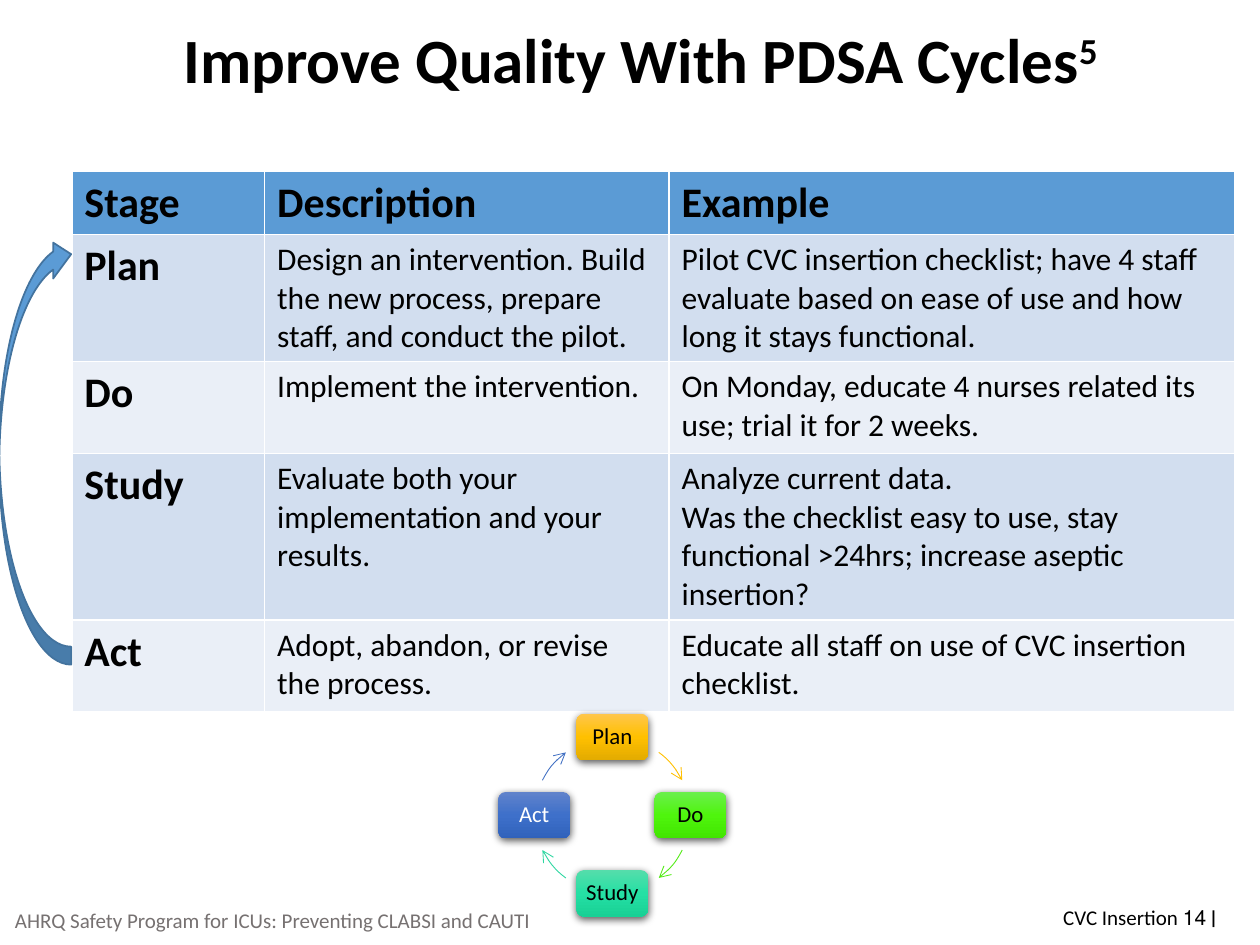
from math import cos, radians, sin

from lxml import etree
from pptx import Presentation
from pptx.dml.color import RGBColor
from pptx.enum import shapes, text
from pptx.oxml import parse_xml
from pptx.oxml.ns import nsdecls, qn
from pptx.util import Inches, Pt

ROWS = [
    ("Stage", "Description", "Example"),
    ("Plan",
     "Design an intervention. Build the new process, prepare staff, and conduct the pilot.",
     "Pilot CVC insertion checklist; have 4 staff evaluate based on ease of use "
     "and how long it stays functional."),
    ("Do", "Implement the intervention.",
     "On Monday, educate 4 nurses related its use; trial it for 2 weeks."),
    ("Study", "Evaluate both your implementation and your results.",
     "Analyze current data.\nWas the checklist easy to use, stay functional >24hrs; "
     "increase aseptic insertion?"),
    ("Act", "Adopt, abandon, or revise the process.",
     "Educate all staff on use of CVC insertion checklist."),
]
WIDTHS = [1.53, 3.21, 4.49]
HEIGHTS = [0.5, 1.01, 0.73, 1.32, 0.73]
HEAD, BANDS = "5B9BD5", ("EAEFF7", "D2DEEF")

# label, text colour, gradient, arrow colour, middle angle of the arrow
STEPS = [
    ("Plan", "000000", ("FFC64B", "FFC000", "E3AB00"), "FFC000", 320),
    ("Do", "000000", ("6BEF4D", "4FF50D", "41E500"), "53EB17", 40),
    ("Study", "000000", ("55DDAB", "25E0A4", "18D095"), "2ED7A1", 140),
    ("Act", "FFFFFF", ("6183CB", "3E70CA", "3062BB"), "4472C4", 220),
]
MID_X, MID_Y, RADIUS = 4.86, 6.47, 0.62
STEP_W, STEP_H = 0.57, 0.37
HALF = 13.5  # half the sweep of a cycle arrow, in degrees


def rgb(code):
    return RGBColor.from_string(code)


def style(para, size, color="000000", bold=False, align=None):
    para.alignment = align
    font = para.font
    font.name, font.size, font.bold = "Calibri", Pt(size), bold
    font.color.rgb = rgb(color)


def add_text(slide, box, words, size, color, align, bold=False):
    frame = slide.shapes.add_textbox(*map(Inches, box)).text_frame
    frame.word_wrap = True
    frame.vertical_anchor = text.MSO_ANCHOR.MIDDLE
    para = frame.paragraphs[0]
    para.add_run().text = words
    style(para, size, color, bold, align)
    return para


def add_stages(slide):
    table = slide.shapes.add_table(
        len(ROWS), len(WIDTHS), Inches(0.57), Inches(1.36),
        Inches(sum(WIDTHS)), Inches(sum(HEIGHTS))).table
    for col, width in zip(table.columns, WIDTHS):
        col.width = Inches(width)
    for r, (words, height) in enumerate(zip(ROWS, HEIGHTS)):
        table.rows[r].height = Inches(height)
        for c, word in enumerate(words):
            cell = table.cell(r, c)
            cell.fill.solid()
            cell.fill.fore_color.rgb = rgb(BANDS[r % 2] if r else HEAD)
            cell.text = word
            label = r == 0 or c == 0
            for para in cell.text_frame.paragraphs:
                style(para, 24 if label else 18, bold=label)


def add_glow(shape, colors):
    """Give the shape a three-stop vertical gradient and a soft shadow."""
    stops = "".join(
        f'<a:gs pos="{i * 50000}"><a:srgbClr val="{color}"/></a:gs>'
        for i, color in enumerate(colors))
    fill = parse_xml(f'<a:gradFill {nsdecls("a")}><a:gsLst>{stops}</a:gsLst>'
                     '<a:lin ang="5400000" scaled="0"/></a:gradFill>')
    shade = parse_xml(
        f'<a:effectLst {nsdecls("a")}><a:outerShdw blurRad="57150" dist="19050" '
        'dir="5400000" algn="ctr" rotWithShape="0"><a:srgbClr val="000000">'
        '<a:alpha val="63000"/></a:srgbClr></a:outerShdw></a:effectLst>')
    shape.line.fill.background()
    props = shape._element.spPr
    props.find(qn("a:prstGeom")).addnext(fill)
    props.append(shade)


def add_step(slide, index, label, color, grad):
    turn = radians(90 * index - 90)
    left = MID_X + RADIUS * cos(turn) - STEP_W / 2
    top = MID_Y + RADIUS * sin(turn) - STEP_H / 2
    step = slide.shapes.add_shape(
        shapes.MSO_SHAPE.ROUNDED_RECTANGLE,
        *map(Inches, (left, top, STEP_W, STEP_H)))
    add_glow(step, grad)
    frame = step.text_frame
    frame.word_wrap = False
    frame.vertical_anchor = text.MSO_ANCHOR.MIDDLE
    frame.margin_left = frame.margin_right = Inches(0.05)
    frame.margin_top = frame.margin_bottom = Inches(0.05)
    para = frame.paragraphs[0]
    para.text = label
    para.line_spacing = 0.9
    style(para, 13, color, align=text.PP_ALIGN.CENTER)


def add_arc(slide, color, angle):
    arc = slide.shapes.add_shape(
        shapes.MSO_SHAPE.ARC, Inches(MID_X - RADIUS), Inches(MID_Y - RADIUS),
        Inches(2 * RADIUS), Inches(2 * RADIUS))
    # Angles are stored in 60000ths of a degree, adjustments in 100000ths
    arc.adjustments[0] = (angle - HALF) * 0.6
    arc.adjustments[1] = (angle + HALF) * 0.6
    arc.shadow.inherit = False
    arc.fill.background()
    arc.line.color.rgb = rgb(color)
    arc.line.width = Pt(0.5)
    etree.SubElement(arc.line._get_or_add_ln(), qn("a:tailEnd"), type="arrow")


def add_return(slide):
    arrow = slide.shapes.add_shape(
        shapes.MSO_SHAPE.CURVED_DOWN_ARROW,
        *map(Inches, (-1.42, 3.29, 3.4, 0.57)))
    arrow.rotation = 270
    arrow.shadow.inherit = False
    arrow.fill.solid()
    arrow.fill.fore_color.rgb = rgb(HEAD)
    arrow.line.color.rgb = rgb("43739E")
    arrow.line.width = Pt(1)


def main():
    deck = Presentation()
    deck.slide_width, deck.slide_height = Inches(10), Inches(7.5)
    slide = deck.slides.add_slide(deck.slide_layouts[6])
    align = text.PP_ALIGN

    title = add_text(slide, (0.17, 0, 9.83, 0.89), "Improve Quality With PDSA Cycles",
                     36, "000000", align.CENTER, True)
    title.line_spacing = 1.05
    note = title.add_run()
    note.text = "5"
    note.font._element.set("baseline", "30000")

    add_stages(slide)
    for i, (label, color, grad, line, angle) in enumerate(STEPS):
        add_step(slide, i, label, color, grad)
        add_arc(slide, line, angle)
    add_text(slide, (0, 7.1, 4.33, 0.4),
             "AHRQ Safety Program for ICUs: Preventing CLABSI and CAUTI",
             12, "767171", align.CENTER)
    add_text(slide, (7.54, 7.08, 2.25, 0.4), "CVC Insertion ׀ 14 ",
             12, "000000", align.RIGHT)
    add_return(slide)
    deck.save("out.pptx")


if __name__ == "__main__":
    main()
